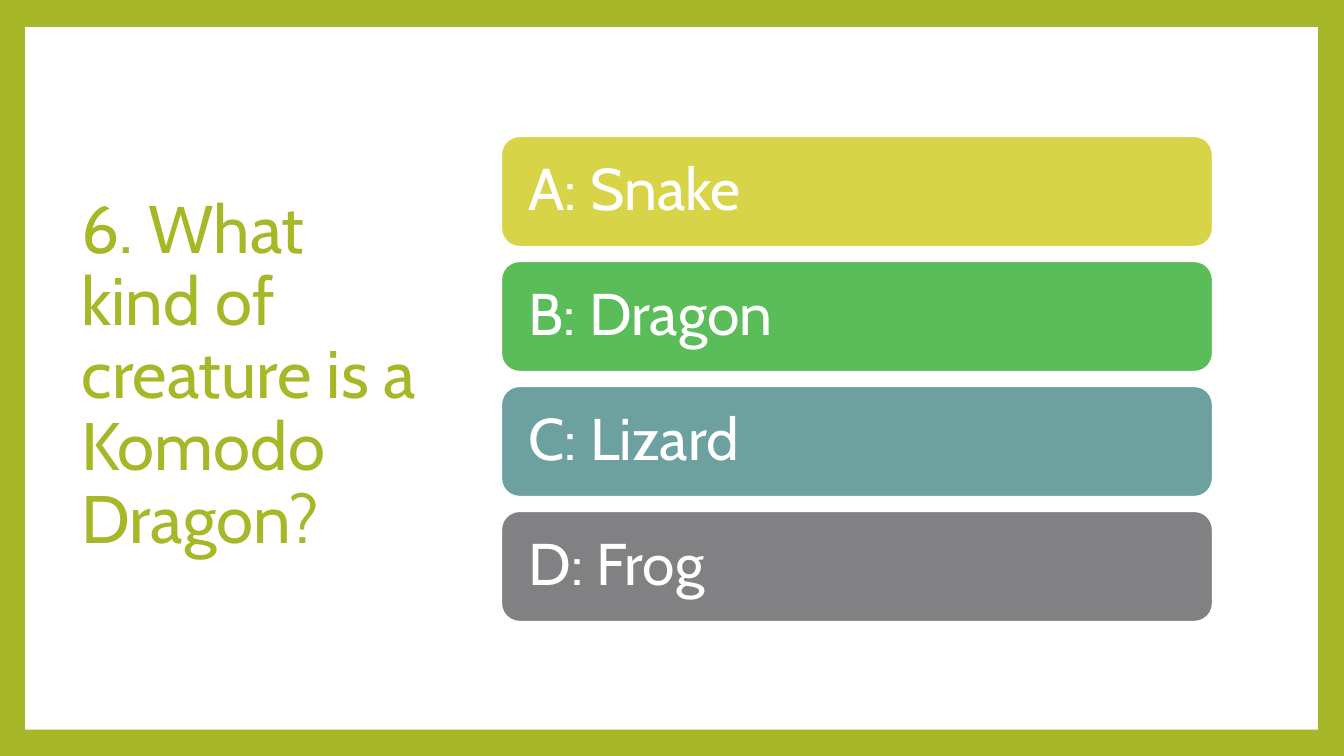
from pptx import Presentation
from pptx.dml.color import RGBColor
from pptx.enum.shapes import MSO_SHAPE
from pptx.enum.text import MSO_ANCHOR, PP_ALIGN
from pptx.util import Inches, Pt

LIME = RGBColor(0xA6, 0xB7, 0x27)
WHITE = RGBColor(0xFF, 0xFF, 0xFF)
YELLOW = RGBColor(0xD7, 0xD4, 0x47)
GREEN = RGBColor(0x5A, 0xBD, 0x59)
TEAL = RGBColor(0x6C, 0xA1, 0xA0)
GRAY = RGBColor(0x81, 0x81, 0x83)

ANSWERS = [
    ("A: Snake", YELLOW),
    ("B: Dragon", GREEN),
    ("C: Lizard", TEAL),
    ("D: Frog", GRAY),
]
ANSWER_TOP = 1.35
ANSWER_PITCH = 1.24


class QuizSlide:
    font_name = "Cabin"
    line_spacing = 0.9

    def __init__(self, deck):
        self.page = deck.slides.add_slide(deck.slide_layouts[6])

    def background(self, color):
        fill = self.page.background.fill
        fill.solid()
        fill.fore_color.rgb = color

    def panel(self, kind, left, top, width, height, color):
        box = self.page.shapes.add_shape(
            kind, Inches(left), Inches(top), Inches(width), Inches(height)
        )
        box.shadow.inherit = False
        box.fill.solid()
        box.fill.fore_color.rgb = color
        box.line.fill.background()
        return box

    def label(self, box, text, size, color, side_inset):
        frame = box.text_frame
        frame.word_wrap = True
        frame.vertical_anchor = MSO_ANCHOR.MIDDLE
        frame.margin_left = frame.margin_right = Inches(side_inset)
        para = frame.paragraphs[0]
        para.alignment = PP_ALIGN.LEFT
        para.line_spacing = self.line_spacing
        span = para.add_run()
        span.text = text
        span.font.name = self.font_name
        span.font.size = Pt(size)
        span.font.color.rgb = color

    def question(self, text):
        box = self.page.shapes.add_textbox(
            Inches(0.71), Inches(0.67), Inches(3.68), Inches(6.13)
        )
        self.label(box, text, 48, LIME, 0.1)

    def answer(self, text, top, color):
        box = self.panel(MSO_SHAPE.ROUNDED_RECTANGLE, 4.97, top, 7.06, 1.1, color)
        box.line.color.rgb = WHITE
        box.line.width = Pt(1.5)
        self.label(box, text, 42, WHITE, 0.22)


def main():
    deck = Presentation()
    deck.slide_width = Inches(13.33)
    deck.slide_height = Inches(7.5)
    quiz = QuizSlide(deck)
    quiz.background(LIME)
    quiz.panel(MSO_SHAPE.RECTANGLE, 0.25, 0.27, 12.82, 6.97, WHITE)
    quiz.question("6. What kind of creature is a Komodo Dragon?")
    for index, (text, color) in enumerate(ANSWERS):
        quiz.answer(text, ANSWER_TOP + index * ANSWER_PITCH, color)
    deck.save("out.pptx")


if __name__ == "__main__":
    main()
